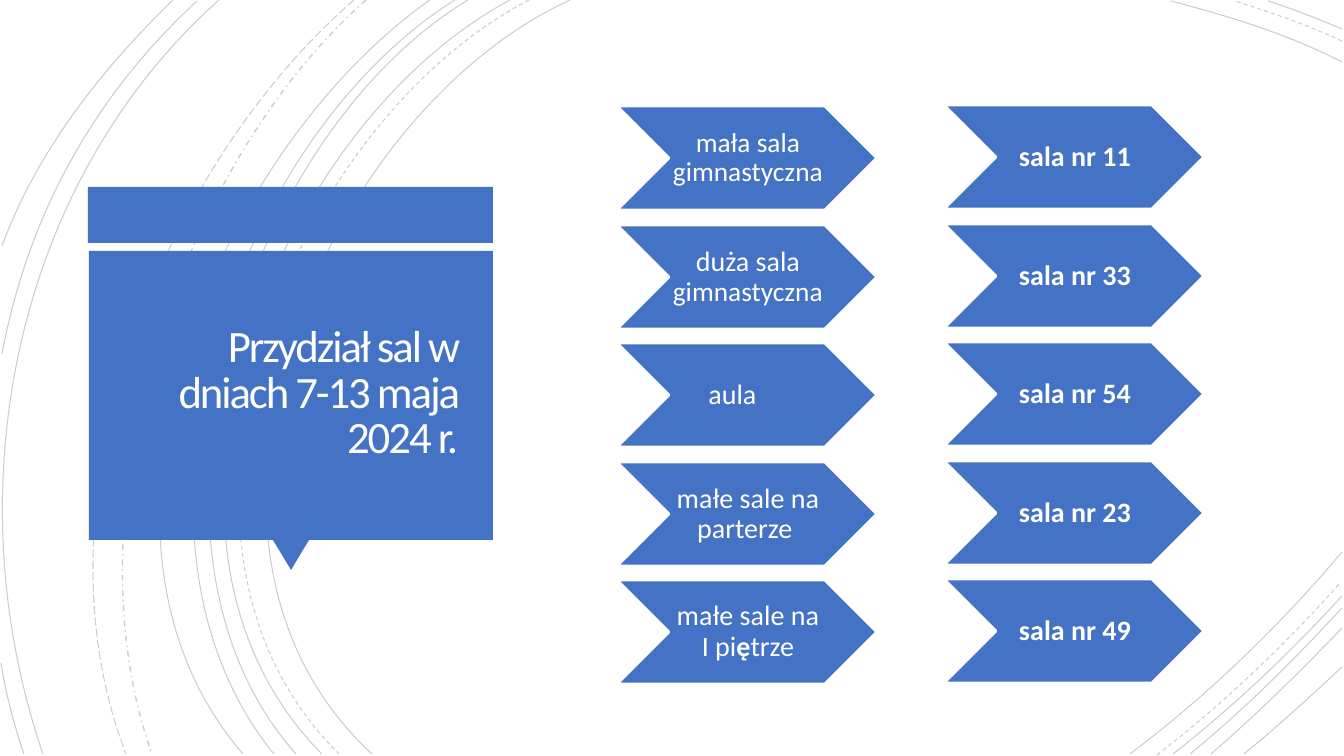
from dataclasses import dataclass

from lxml.etree import SubElement
from pptx import Presentation
from pptx.dml.color import RGBColor
from pptx.enum.dml import MSO_LINE as Dash
from pptx.enum.shapes import MSO_SHAPE as Preset
from pptx.enum.text import MSO_ANCHOR as Anchor, PP_ALIGN as Align
from pptx.oxml.ns import qn
from pptx.util import Emu, Pt

EMU_PER_PX = 914400 / 100.8


def px(length):
    return Emu(round(length * EMU_PER_PX))


@dataclass(frozen=True)
class Theme:
    blue: str = "4472C4"
    white: str = "FFFFFF"
    title_white: str = "FFFEFF"
    arc: str = "000000"
    arc_opacity: int = 20
    font: str = "Calibri"
    title_size: float = 32
    label_size: float = 20
    tight_label_size: float = 19.5
    arc_width: float = 0.75
    arrow_border: float = 2


# Start, two control points and end of each background curve.
SOLID_ARCS = [
    ((570, 0), (318, 116), (144, 544), (372, 754)),
    ((510, 0), (272, 128), (111, 541), (322, 754)),
    ((468, 0), (246, 134), (111, 545), (296, 754)),
    ((455, 0), (233, 139), (98, 537), (274, 754)),
    ((430, 0), (219, 148), (53, 533), (243, 754)),
    ((219, 0), (11, 186), (-46, 494), (43, 754)),
    ((197, 1), (93, 97), (28, 216), (2, 354)),
    ((1, 663), (6, 694), (14, 725), (24, 754)),
    ((173, 0), (101, 70), (37, 151), (2, 246)),
    ((1342, 62), (1288, 34), (1228, 16), (1171, 1)),
    ((1342, 29), (1318, 19), (1293, 9), (1268, 1)),
    ((1130, 754), (1207, 696), (1279, 627), (1342, 552)),
    ((1173, 754), (1233, 707), (1290, 653), (1342, 596)),
    ((1190, 754), (1244, 710), (1294, 660), (1342, 608)),
    ((1211, 754), (1256, 715), (1300, 672), (1342, 628)),
    ((1244, 754), (1277, 727), (1309, 698), (1342, 667)),
]
DASHED_ARCS = [
    ((529, 0), (287, 126), (124, 541), (339, 754)),
    ((1342, 41), (1307, 25), (1270, 12), (1235, 1)),
    ((1157, 755), (1223, 704), (1285, 645), (1341, 582)),
]
DASH_DOT_ARCS = [((366, 0), (177, 167), (66, 513), (152, 754))]
LONG_DASH_ARCS = [((354, 0), (158, 170), (29, 503), (126, 754))]


def bend(shape):
    """Turn the three line segments of a freeform into one cubic curve."""
    segments = list(shape.element.iter(qn("a:lnTo")))
    outline = segments[0].getparent()
    curve = SubElement(outline, qn("a:cubicBezTo"))
    for segment in segments:
        curve.append(segment[0])
        outline.remove(segment)


def write_text(shape, spans, font, size, color, align=Align.CENTER,
               line_spacing=0.9, insets=(0, 0, 0, 0), tracking=None):
    """Fill a shape with one paragraph; each span is (text, format overrides)."""
    frame = shape.text_frame
    frame.word_wrap = True
    frame.vertical_anchor = Anchor.MIDDLE
    (frame.margin_left, frame.margin_top,
     frame.margin_right, frame.margin_bottom) = map(px, insets)
    para = frame.paragraphs[0]
    para.alignment = align
    para.line_spacing = line_spacing
    for text, overrides in spans:
        span = para.add_run()
        span.text = text
        span.font.name = font
        span.font.size = Pt(overrides.get("size", size))
        span.font.bold = overrides.get("bold", False)
        span.font.color.rgb = RGBColor.from_string(color)
        if tracking is not None:
            span.font._element.set("spc", str(round(tracking * 100)))


class SlideBuilder:
    def __init__(self, slide, theme):
        self.shapes = slide.shapes
        self.theme = theme

    def arc(self, curve, dash=None, width=None):
        theme = self.theme
        start, *rest = [tuple(map(px, point)) for point in curve]
        builder = self.shapes.build_freeform(*start)
        builder.add_line_segments(rest, close=False)
        shape = builder.convert_to_shape()
        bend(shape)
        shape.shadow.inherit = False
        shape.fill.background()
        shape.line.width = Pt(width or theme.arc_width)
        shape.line.color.rgb = RGBColor.from_string(theme.arc)
        if dash is not None:
            shape.line.dash_style = dash
        color = next(shape.element.iter(qn("a:srgbClr")))
        SubElement(color, qn("a:alpha")).set("val", str(theme.arc_opacity * 1000))

    def block(self, preset, left, top, width, height, rotation=0):
        shape = self.shapes.add_shape(preset, *map(px, (left, top, width, height)))
        shape.shadow.inherit = False
        shape.fill.solid()
        shape.fill.fore_color.rgb = RGBColor.from_string(self.theme.blue)
        shape.line.fill.background()
        shape.rotation = rotation
        return shape

    def title(self, text, left, top, width, height):
        theme = self.theme
        box = self.shapes.add_textbox(*map(px, (left, top, width, height)))
        write_text(box, [(text, {})], theme.font, theme.title_size,
                   theme.title_white, align=Align.RIGHT, line_spacing=0.85,
                   insets=(25, 25, 25, 25), tracking=-1.5)

    def arrow(self, spans, left, top, width, height, right_inset=1):
        theme = self.theme
        shape = self.block(Preset.CHEVRON, left, top, width, height)
        shape.line.color.rgb = RGBColor.from_string(theme.white)
        shape.line.width = Pt(theme.arrow_border)
        write_text(shape, spans, theme.font, theme.label_size, theme.white,
                   insets=(3, 1, right_inset, 1))


def main():
    deck = Presentation()
    deck.slide_width, deck.slide_height = px(1344), px(756)
    theme = Theme()
    page = SlideBuilder(deck.slides.add_slide(deck.slide_layouts[6]), theme)

    for curves, dash, width in (
            (SOLID_ARCS, None, None), (DASHED_ARCS, Dash.DASH, None),
            (DASH_DOT_ARCS, Dash.DASH_DOT, 1), (LONG_DASH_ARCS, Dash.LONG_DASH, None)):
        for curve in curves:
            page.arc(curve, dash, width)

    page.block(Preset.RECTANGLE, 88, 187, 405, 56)
    page.block(Preset.ISOSCELES_TRIANGLE, 273, 540, 36, 30, rotation=180)
    page.block(Preset.RECTANGLE, 89, 251, 404, 289)
    page.title("Przydział sal w dniach 7-13 maja 2024 r.", 97, 259, 386, 271)

    tight, bold = {"size": theme.tight_label_size}, {"bold": True}
    rooms = [
        ([("mała sala gimnastyczna ", tight)], "sala nr 11"),
        ([("duża sala ", {}), ("gimnastyczna", tight)], "sala nr 33"),
        ([("aula", {})], "sala nr 54"),
        ([("małe sale na parterze ", {})], "sala nr 23"),
        ([("małe sale na I pi", {}), ("ę", bold), ("trze", {})], "sala nr 49"),
    ]
    rows_span = 474
    for row, (place, room) in enumerate(rooms):
        offset = -(-row * rows_span // (len(rooms) - 1))
        page.arrow(place, 617, 106 + offset, 260, 104,
                   right_inset=32 if place[0][0] == "aula" else 1)
        page.arrow([(room, bold)], 944, 105 + offset, 260, 104)

    deck.save("out.pptx")


if __name__ == "__main__":
    main()
